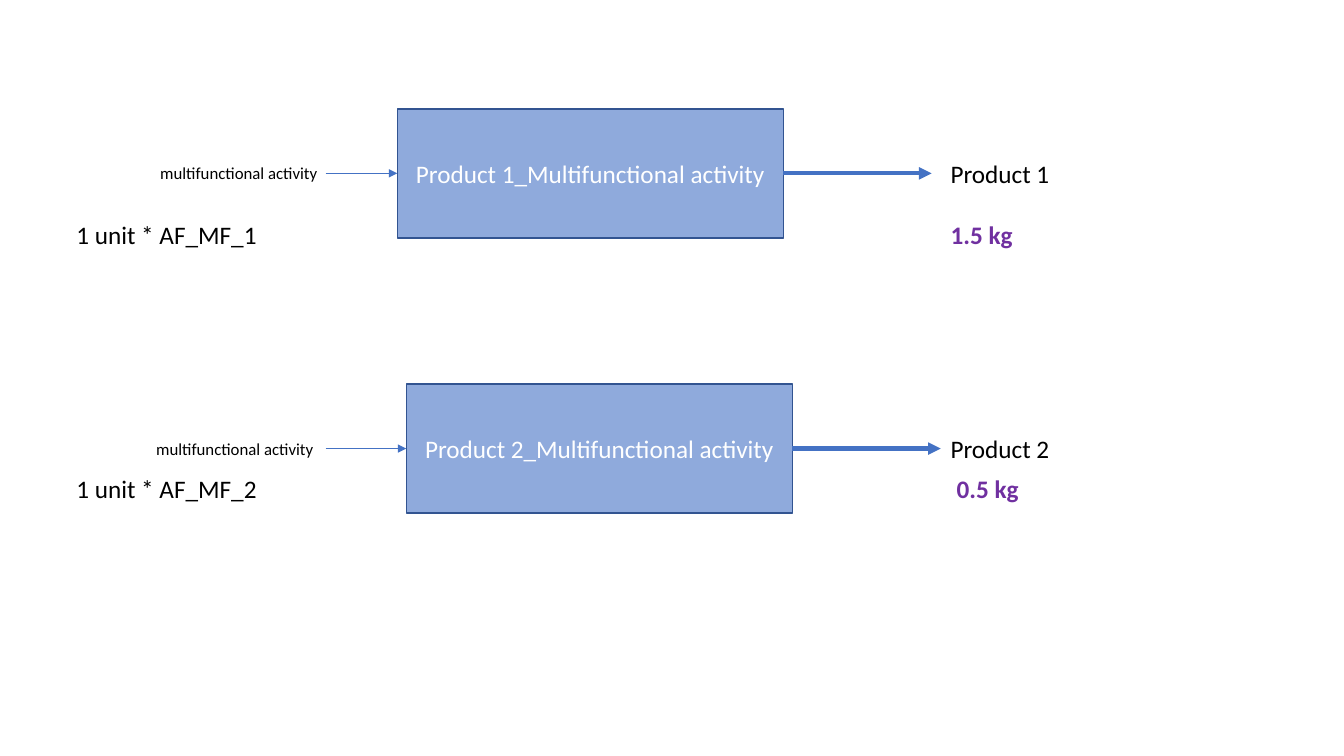
import pptx
import pptx.util
import pptx.dml.color
import pptx.enum.shapes
import pptx.enum.text
import pptx.oxml
import pptx.oxml.ns
from pptx.util import Inches

# Positions in inches; amount_y is the top of the lower labels.
FLOWS = [
    dict(activity="Product 1_Multifunctional activity", product="Product 1",
         amount="1.5 kg", share="1 unit * AF_MF_1",
         box_x=3.94, box_y=1.08, input_x=1.49, amount_x=9.33, amount_y=2.13),
    dict(activity="Product 2_Multifunctional activity", product="Product 2",
         amount="0.5 kg", share="1 unit * AF_MF_2",
         box_x=4.03, box_y=3.81, input_x=1.45, amount_x=9.39, amount_y=4.65),
]
INPUT_NAME = "multifunctional activity"
BOX_W, BOX_H = 3.83, 1.28
INPUT_START_X, OUTPUT_LENGTH = 3.23, 1.47
PRODUCT_X, SHARE_X = 9.33, 0.66
LABEL_H, INPUT_H = 0.4, 0.3

THEME = dict(font="Calibri", body=18, small=12, text="000000", box_text="FFFFFF",
             box="8FAADC", outline="325491", arrow="4472C4", amount="7030A0",
             thin=0.5, thick=3)


def color(name):
    return pptx.dml.color.RGBColor.from_string(THEME[name])


def write(frame, text, size="body", ink="text", bold=False, align=None):
    para = frame.paragraphs[0]
    para.alignment = align
    span = para.add_run()
    span.text = text
    span.font.name = THEME["font"]
    span.font.size = pptx.util.Pt(THEME[size])
    span.font.bold = bold
    span.font.color.rgb = color(ink)


def add_label(page, text, x, y, w, h=LABEL_H, wrap=True, **style):
    frame = page.shapes.add_textbox(Inches(x), Inches(y), Inches(w), Inches(h)).text_frame
    frame.word_wrap = wrap
    frame.auto_size = pptx.enum.text.MSO_AUTO_SIZE.SHAPE_TO_FIT_TEXT
    write(frame, text, **style)


def add_box(page, text, x, y):
    box = page.shapes.add_shape(pptx.enum.shapes.MSO_SHAPE.RECTANGLE,
                                Inches(x), Inches(y), Inches(BOX_W), Inches(BOX_H))
    box.shadow.inherit = False
    box.fill.solid()
    box.fill.fore_color.rgb = color("box")
    box.line.color.rgb = color("outline")
    box.line.width = pptx.util.Pt(1)
    box.text_frame.word_wrap = True
    box.text_frame.vertical_anchor = pptx.enum.text.MSO_ANCHOR.MIDDLE
    write(box.text_frame, text, ink="box_text", align=pptx.enum.text.PP_ALIGN.CENTER)


def add_arrow(page, start_x, end_x, y, weight):
    arrow = page.shapes.add_connector(pptx.enum.shapes.MSO_CONNECTOR.STRAIGHT,
                                      Inches(start_x), Inches(y), Inches(end_x), Inches(y))
    arrow.line.color.rgb = color("arrow")
    arrow.line.width = pptx.util.Pt(THEME[weight])
    head = pptx.oxml.parse_xml(
        f'<a:tailEnd {pptx.oxml.ns.nsdecls("a")} type="triangle"/>')
    arrow.line._get_or_add_ln().append(head)
    arrow._element.spPr.append(
        pptx.oxml.parse_xml(f'<a:effectLst {pptx.oxml.ns.nsdecls("a")}/>'))


def add_flow(page, flow):
    """Draw one activity with its input on the left and its product on the right."""
    left, top = flow["box_x"], flow["box_y"]
    right, middle = left + BOX_W, top + BOX_H / 2
    add_box(page, flow["activity"], left, top)
    add_arrow(page, INPUT_START_X, left, middle, "thin")
    add_arrow(page, right, right + OUTPUT_LENGTH, middle, "thick")
    add_label(page, INPUT_NAME, flow["input_x"], middle - INPUT_H / 2, 1.78, INPUT_H,
              wrap=False, size="small")
    add_label(page, flow["product"], PRODUCT_X, middle - LABEL_H / 2, 2.06)
    add_label(page, flow["share"], SHARE_X, flow["amount_y"], 2.15)
    add_label(page, flow["amount"], flow["amount_x"], flow["amount_y"], 0.82,
              wrap=False, ink="amount", bold=True)


def main():
    deck = pptx.Presentation()
    deck.slide_width, deck.slide_height = Inches(13.33), Inches(7.5)
    page = deck.slides.add_slide(deck.slide_layouts[6])
    for flow in FLOWS:
        add_flow(page, flow)
    deck.save("out.pptx")


if __name__ == "__main__":
    main()
